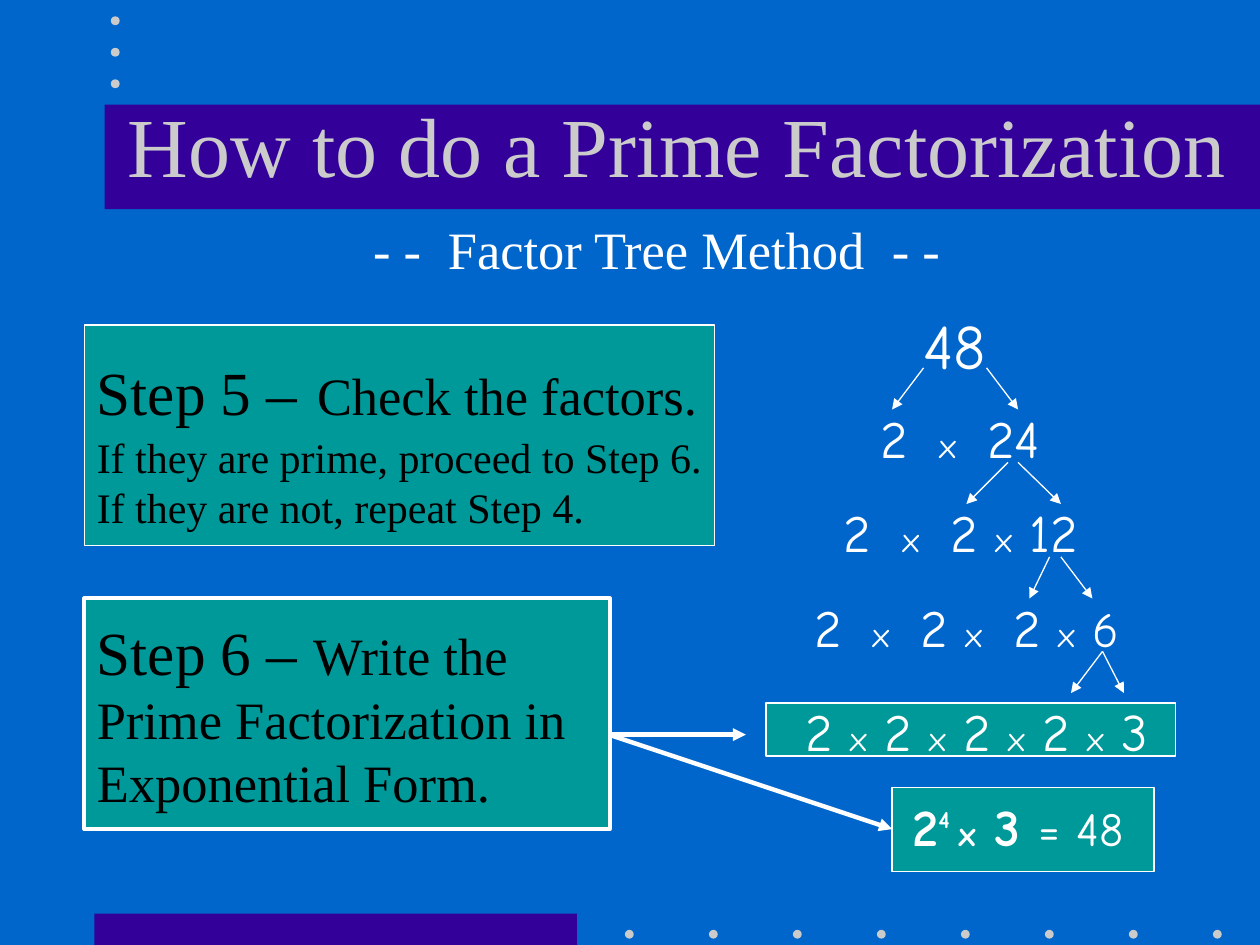
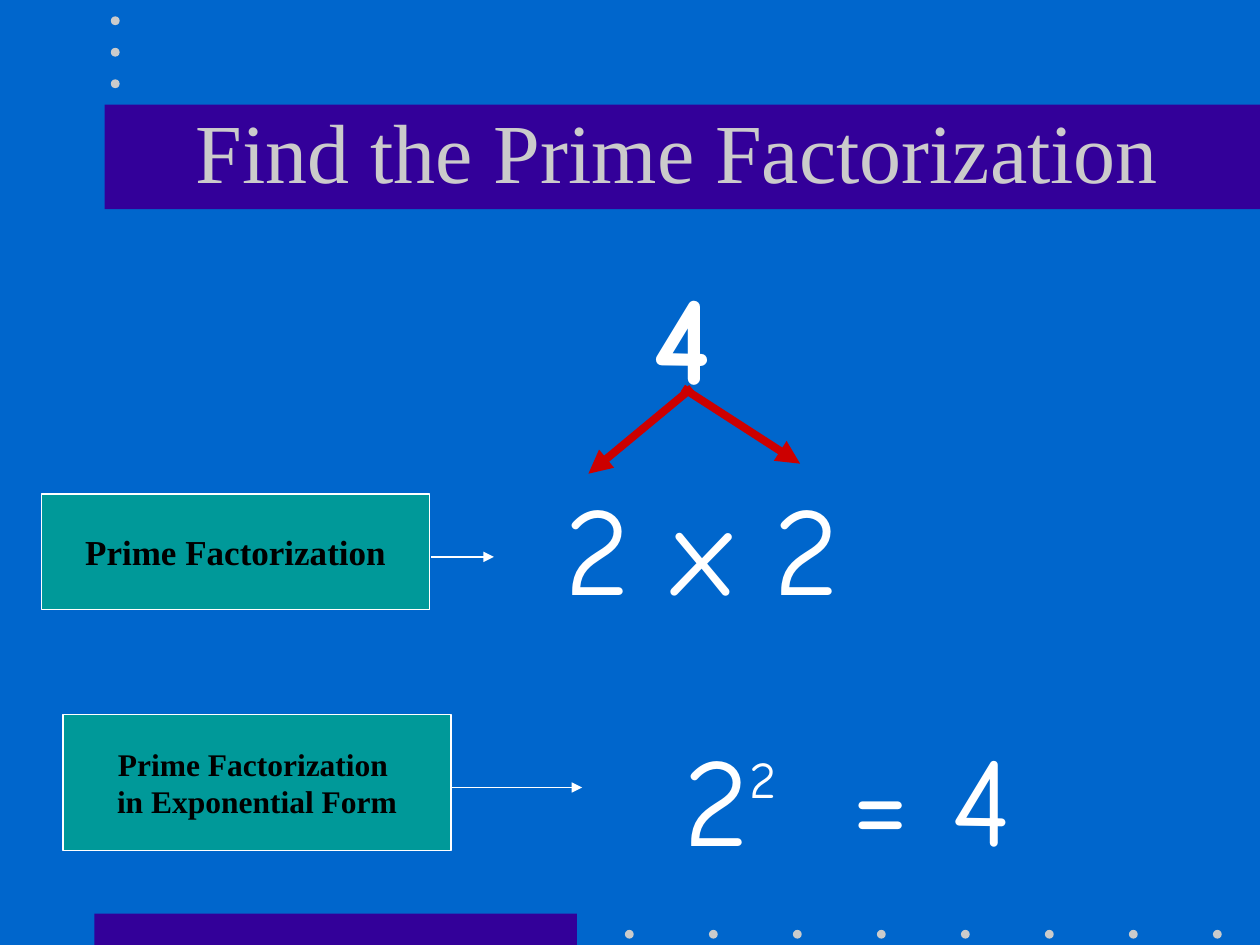
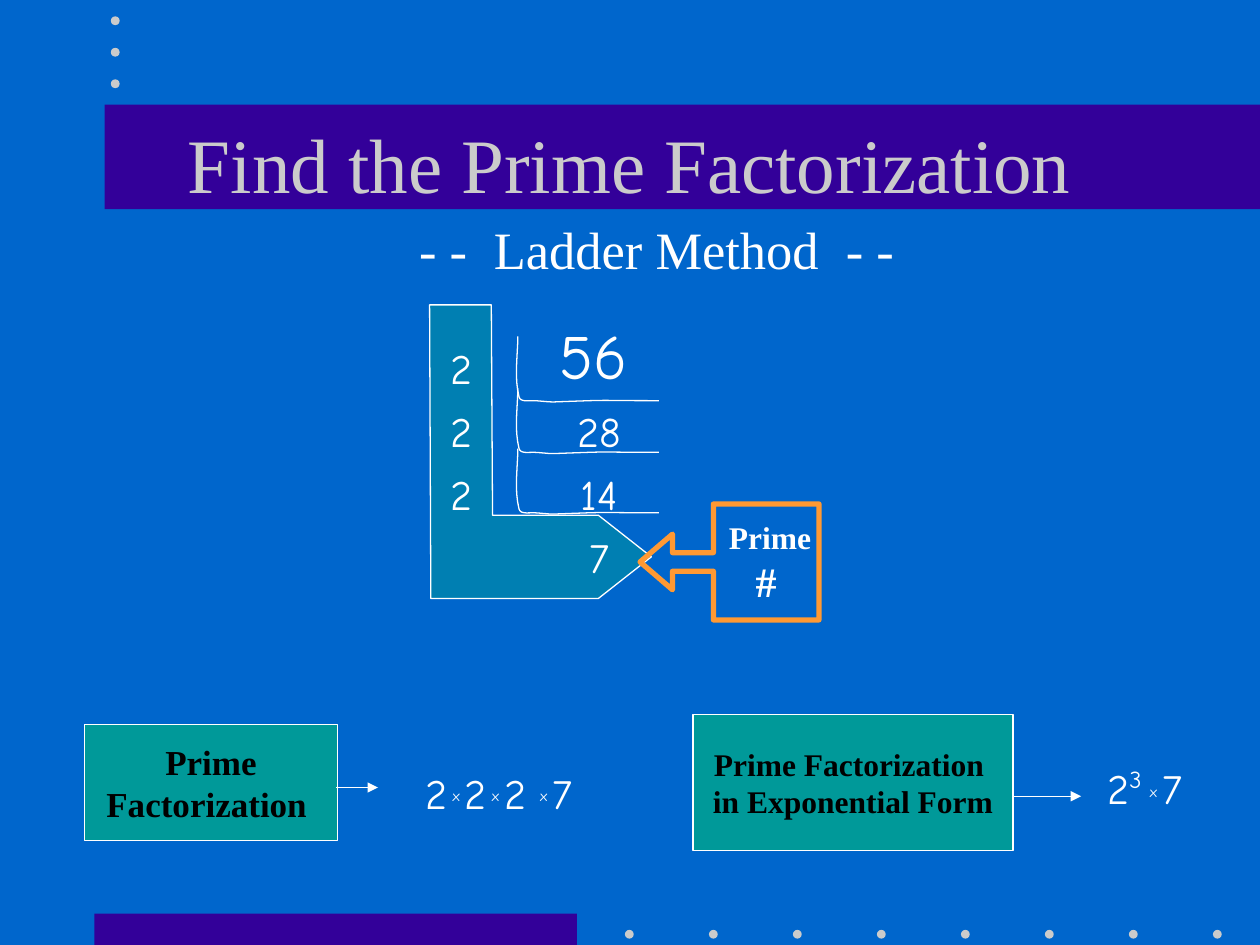
"""Build three prime factorization slides: factor tree, worked example and ladder."""
from dataclasses import dataclass
from itertools import groupby

from lxml import etree
from pptx import Presentation
from pptx.dml.color import RGBColor
from pptx.enum.shapes import MSO_CONNECTOR, MSO_SHAPE
from pptx.enum.text import MSO_ANCHOR, MSO_AUTO_SIZE, PP_ALIGN
from pptx.oxml.ns import qn
from pptx.util import Inches, Pt

RECTANGLE, OVAL = MSO_SHAPE.RECTANGLE, MSO_SHAPE.OVAL
CALLOUT = MSO_SHAPE.LEFT_ARROW_CALLOUT
STRAIGHT = MSO_CONNECTOR.STRAIGHT
LEFT, CENTER = PP_ALIGN.LEFT, PP_ALIGN.CENTER
TOP, MIDDLE = MSO_ANCHOR.TOP, MSO_ANCHOR.MIDDLE
FIXED = MSO_AUTO_SIZE.NONE
TITLE_ONLY = 5


@dataclass(frozen=True)
class Theme:
    """Colours, fonts, type sizes and line widths of the deck."""
    background: str = "0066CC"
    band: str = "330099"
    soft: str = "CBCBCB"
    panel: str = "009999"
    white: str = "FFFFFF"
    black: str = "000000"
    red: str = "CC0000"
    orange: str = "FF9933"
    serif: str = "Times New Roman"
    hand: str = "Comic Neue"
    title: int = 48
    small_title: int = 44
    step: int = 35
    body: int = 30
    detail: int = 24
    times: int = 20
    large: int = 36
    huge: int = 72
    label: int = 20
    small_label: int = 18
    small_times: int = 15
    thin: float = 0.75
    space_width: float = 0.26


THEME = Theme()


@dataclass(frozen=True)
class Span:
    """A run of text with one format."""
    text: str
    size: float
    bold: bool = False
    baseline: int = 0
    tracking: float = 0


@dataclass(frozen=True)
class Area:
    """A rectangle in inches."""
    left: float
    top: float
    width: float
    height: float

    def lengths(self) -> list:
        return [Inches(n) for n in (self.left, self.top, self.width, self.height)]


@dataclass(frozen=True)
class Words:
    """Lines of spans and how they are set in a box."""
    lines: list
    font: str = THEME.hand
    color: str = THEME.white
    alignment: PP_ALIGN = CENTER
    anchor: MSO_ANCHOR = TOP
    wrap: bool = True
    spacing: float = 1.0


@dataclass(frozen=True)
class Arrow:
    """An arrow between two points in inches."""
    start: tuple
    end: tuple
    color: str = THEME.white
    width: float = THEME.thin


@dataclass(frozen=True)
class Panel:
    """A filled and outlined rectangle, with or without words."""
    area: Area
    words: Words | None = None
    border: float = THEME.thin


def rgb(color: str) -> RGBColor:
    return RGBColor.from_string(color)


def set_all(target, values: dict) -> None:
    for name, value in values.items():
        setattr(target, name, value)


def paint(shape, fill: str | None, border: str | None, width: float = THEME.thin) -> None:
    shape.shadow.inherit = False
    if fill:
        shape.fill.solid()
        shape.fill.fore_color.rgb = rgb(fill)
    else:
        shape.fill.background()
    if border:
        shape.line.color.rgb = rgb(border)
        shape.line.width = Pt(width)
    else:
        shape.line.fill.background()


def write(frame, words: Words) -> None:
    set_all(frame, {"auto_size": FIXED, "word_wrap": words.wrap,
                    "vertical_anchor": words.anchor})
    for index, line in enumerate(words.lines):
        para = frame.add_paragraph() if index else frame.paragraphs[0]
        set_all(para, {"alignment": words.alignment, "line_spacing": words.spacing})
        for span in line:
            run = para.add_run()
            run.text = span.text
            set_all(run.font, {"name": words.font, "size": Pt(span.size), "bold": span.bold})
            run.font.color.rgb = rgb(words.color)
            extras = {"baseline": span.baseline * 1000, "spc": round(span.tracking * 100)}
            for name, value in extras.items():
                if value:
                    run.font._element.set(name, str(value))


def add_words(page, area: Area, words: Words) -> None:
    write(page.shapes.add_textbox(*area.lengths()).text_frame, words)


def add_panel(page, panel: Panel) -> None:
    box = page.shapes.add_shape(RECTANGLE, *panel.area.lengths())
    paint(box, THEME.panel, THEME.white, panel.border)
    if panel.words:
        write(box.text_frame, panel.words)


def add_arrow(page, arrow: Arrow) -> None:
    points = [Inches(n) for n in (*arrow.start, *arrow.end)]
    connector = page.shapes.add_connector(STRAIGHT, *points)
    connector.line.color.rgb = rgb(arrow.color)
    connector.line.width = Pt(arrow.width)
    properties = connector.element.spPr
    etree.SubElement(properties.find(qn("a:ln")), qn("a:tailEnd"), type="triangle")
    etree.SubElement(properties, qn("a:effectLst"))


def add_outline(page, points: list, fill: str | None = None, close: bool = False):
    corners = [(Inches(x), Inches(y)) for x, y in points]
    builder = page.shapes.build_freeform(*corners[0])
    builder.add_line_segments(corners[1:], close=close)
    outline = builder.convert_to_shape()
    paint(outline, fill, THEME.white)
    return outline


def wide(size: float) -> Span:
    """Return one space that is twice as wide as usual."""
    return Span(" ", size, tracking=size * THEME.space_width)


def product(row: str) -> list[Span]:
    """Split a row into factors, small times signs and wide gaps (~)."""
    spans = []
    for mark, group in groupby(row, lambda sign: sign if sign in "x~" else ""):
        if mark == "~":
            spans.append(wide(THEME.body))
        else:
            spans.append(Span("".join(group), THEME.times if mark else THEME.body))
    return spans


def label(size: int, *lines: str) -> Words:
    return Words([[Span(line, size, bold=True)] for line in lines], THEME.serif,
                 THEME.black, anchor=MIDDLE, wrap=False)


def step(*lines: list) -> Words:
    return Words(list(lines), THEME.serif, THEME.black, LEFT, MIDDLE, False)


def add_subtitle(page, text: str) -> None:
    size = THEME.body
    line = [Span("- -", size), wide(size), Span(text, size), wide(size), Span("- -", size)]
    add_words(page, Area(2.42, 1.67, 5.58, 0.6), Words([line], THEME.serif))


def add_page(deck, title: str, area: Area, size: int = THEME.title, spacing: float = 0.85):
    page = deck.slides.add_slide(deck.slide_layouts[TITLE_ONLY])
    holder = page.shapes.title
    set_all(holder, dict(zip(("left", "top", "width", "height"), area.lengths())))
    write(holder.text_frame, Words([[Span(title, size)]], THEME.serif, THEME.soft,
                                   anchor=MIDDLE, spacing=spacing))
    return page


def decorate_master(deck, page) -> None:
    """Draw the bands and dots on a page and move them to the slide master."""
    master = deck.slide_master
    master.background.fill.solid()
    master.background.fill.fore_color.rgb = rgb(THEME.background)
    bands = [Area(0.75, 7.25, 3.83, 0.25), Area(0.83, 0.83, 9.17, 0.83)]
    dots = [Area(4.96 + 2 / 3 * column, 7.38, 0.07, 0.07) for column in range(8)]
    dots += [Area(0.88, 0.13 + 0.25 * row, 0.07, 0.07) for row in range(3)]
    parts = [(RECTANGLE, area, THEME.band) for area in bands]
    parts += [(OVAL, area, THEME.soft) for area in dots]
    for number, (preset, area, color) in enumerate(parts, start=100):
        shape = page.shapes.add_shape(preset, *area.lengths())
        paint(shape, color, None)
        shape.element.nvSpPr.cNvPr.set("id", str(number))
        master.shapes.element.append(shape.element)


def build_factor_tree(deck) -> None:
    page = add_page(deck, "How to do a Prime Factorization", Area(0.75, 0.58, 9.25, 1.25))
    decorate_master(deck, page)
    add_subtitle(page, "Factor Tree Method")
    check = step(
        [Span("Step 5 –", THEME.step), Span(" ", THEME.small_title),
         Span("Check the factors.", THEME.body)],
        [Span("If they are prime, proceed to Step 6.", THEME.detail)],
        [Span("If they are not, repeat Step 4.", THEME.detail)])
    finish = step(
        [Span("Step 6 – ", THEME.step), Span("Write the", THEME.body)],
        [Span("Prime Factorization in", THEME.body)],
        [Span("Exponential Form.", THEME.body)])
    for panel in (Panel(Area(7.08, 6.25, 2.08, 0.67)),
                  Panel(Area(6.08, 5.58, 3.25, 0.42)),
                  Panel(Area(0.67, 2.58, 5, 1.75), check),
                  Panel(Area(0.67, 4.75, 4.17, 1.83), finish, 2.25)):
        add_panel(page, panel)

    add_words(page, Area(6.58, 2.5, 2, 0.58),
              Words([[Span("48", THEME.large)]], spacing=0.8))
    power = [Span("2", THEME.body, True), Span("4 ", THEME.detail, True, 42),
             Span("x", THEME.times, True), Span(" 3 ", THEME.body, True), Span("= 48", 27)]
    rows = [
        (Area(6.33, 3.17, 2.58, 0.6), product("2~x~24")),
        (Area(6.25, 3.92, 2.75, 0.6), product("2~x~2 x 12")),
        (Area(5.92, 4.67, 3.5, 0.6), product("2~x~2 x~2 x ") + [Span("6", 28)]),
        (Area(6, 5.5, 3.5, 0.6), product("2 x 2 x 2 x 2 x 3")),
        (Area(6.33, 6.25, 3.5, 0.6), power),
    ]
    for area, spans in rows:
        add_words(page, area, Words([spans]))

    branches = [((7.33, 7.08), (7.83, 8.08)), ((8, 7.67), (8.08, 8.42)),
                ((8.33, 8.17), (8.42, 8.67)), ((8.75, 8.5), (8.75, 8.92))]
    for level, pair in enumerate(branches):
        top = 2.92 + 0.75 * level
        for start, end in pair:
            add_arrow(page, Arrow((start, top), (end, top + 0.33)))
    for end in ((5.92, 5.83), (7.08, 6.58)):
        add_arrow(page, Arrow((4.83, 5.83), end, width=2.5))


def build_example(deck) -> None:
    page = add_page(deck, "Find the Prime Factorization", Area(0.75, 0.75, 9.25, 1))
    power = [Span("2", THEME.huge), Span("2", 51, baseline=54),
             wide(THEME.huge), Span("= 4", THEME.huge)]
    for area, spans, wrap in (
            (Area(5.08, 2, 0.69, 1.3), [Span("4", THEME.huge, True)], False),
            (Area(4.38, 3.68, 2.39, 1.3), [Span("2 x 2", THEME.huge)], False),
            (Area(5.33, 5.67, 4.67, 1.3), power, True)):
        add_words(page, area, Words([spans], alignment=LEFT, wrap=wrap))
    add_panel(page, Panel(Area(0.33, 3.92, 3.08, 0.92),
                          label(THEME.label, "Prime Factorization")))
    add_panel(page, Panel(Area(0.5, 5.67, 3.08, 1.08),
                          label(THEME.small_label, "Prime Factorization ",
                                "in Exponential Form")))
    for arrow in (Arrow((5.49, 3.08), (4.67, 3.76), THEME.red, 4.5),
                  Arrow((5.42, 3.08), (6.35, 3.68), THEME.red, 4.5),
                  Arrow((3.42, 4.42), (3.92, 4.42)),
                  Arrow((3.58, 6.25), (4.62, 6.25))):
        add_arrow(page, arrow)


def curve(points: list, steps: int = 8) -> list:
    """Sample joined cubic curves, given as a start and triples of points."""
    sampled = [points[0]]
    for first in range(0, len(points) - 1, 3):
        corners = points[first:first + 4]
        for index in range(1, steps + 1):
            t = index / steps
            weights = ((1 - t) ** 3, 3 * t * (1 - t) ** 2, 3 * t * t * (1 - t), t ** 3)
            sampled.append(tuple(sum(weight * corner[axis] for weight, corner
                                     in zip(weights, corners)) for axis in (0, 1)))
    return sampled


def build_ladder(deck) -> None:
    page = add_page(deck, "Find the Prime Factorization", Area(0.75, 0.67, 8.5, 1.25),
                    THEME.small_title, 1.0)
    add_subtitle(page, "Ladder Method")
    bend = add_outline(page, [(5.17, 4.42), (4.75, 4.09), (3.91, 4.09), (3.9, 2.42),
                              (3.41, 2.42), (3.42, 4.75), (4.75, 4.75)], THEME.panel, True)
    tint = bend.element.spPr.find(qn("a:solidFill"))[0]
    etree.SubElement(tint, qn("a:alpha"), val="50000")

    rung = curve([(4.11, 0), (4.11, 0.16), (4.08, 0.32), (4.12, 0.48), (4.13, 0.52),
                  (4.19, 0.51), (4.23, 0.51), (4.28, 0.51), (4.34, 0.52), (4.39, 0.52),
                  (4.95, 0.5), (4.66, 0.51), (5.23, 0.51)])
    for top in (2.67, 3.08, 3.56):
        add_outline(page, [(x, top + y) for x, y in rung])

    add_words(page, Area(4.17, 2.58, 1.08, 0.58),
              Words([[Span("56", THEME.large)]], spacing=0.8))
    columns = [(3.33, 2.67, ("2", "2", "2")), (4.42, 3.17, ("28", "14", "7"))]
    numbers = [(Area(left, top + 0.5 * row, 0.67, 0.5), [Span(text, THEME.detail)])
               for left, top, texts in columns for row, text in enumerate(texts)]
    two, seven = Span("2", THEME.detail), Span("7", THEME.detail)
    times = Span(" x ", THEME.small_times, baseline=30)
    tight_times = Span("x ", THEME.small_times, baseline=30)
    numbers += [
        (Area(3, 5.83, 1.92, 0.92),
         [two, times, two, times, Span("2 ", THEME.detail), tight_times, seven]),
        (Area(8.67, 5.92, 0.83, 0.67),
         [two, Span("3 ", THEME.detail, baseline=40), tight_times, seven]),
    ]
    for area, spans in numbers:
        add_words(page, area, Words([spans], anchor=MIDDLE, wrap=False))

    add_panel(page, Panel(Area(0.67, 5.75, 2.01, 0.92),
                          label(THEME.label, " Prime ", "Factorization ")))
    add_panel(page, Panel(Area(5.5, 5.67, 2.54, 1.08),
                          label(THEME.small_label, "Prime Factorization ",
                                "in Exponential Form")))
    add_arrow(page, Arrow((2.67, 6.25), (3, 6.25)))
    add_arrow(page, Arrow((8.04, 6.32), (8.58, 6.32)))

    callout = page.shapes.add_shape(CALLOUT, *Area(5.08, 4, 1.42, 0.92).lengths())
    for index, value in enumerate((0.16, 0.24, 0.28, 0.59)):
        callout.adjustments[index] = value
    paint(callout, None, THEME.orange, 3)
    write(callout.text_frame, Words([[Span(" Prime", THEME.small_label, True)],
                                     [Span("#", THEME.detail, True)]],
                                    THEME.serif, anchor=MIDDLE, wrap=False))


def main() -> None:
    deck = Presentation()
    set_all(deck, {"slide_width": Inches(10), "slide_height": Inches(7.5)})
    build_factor_tree(deck)
    build_example(deck)
    build_ladder(deck)
    deck.save("out.pptx")


if __name__ == "__main__":
    main()
